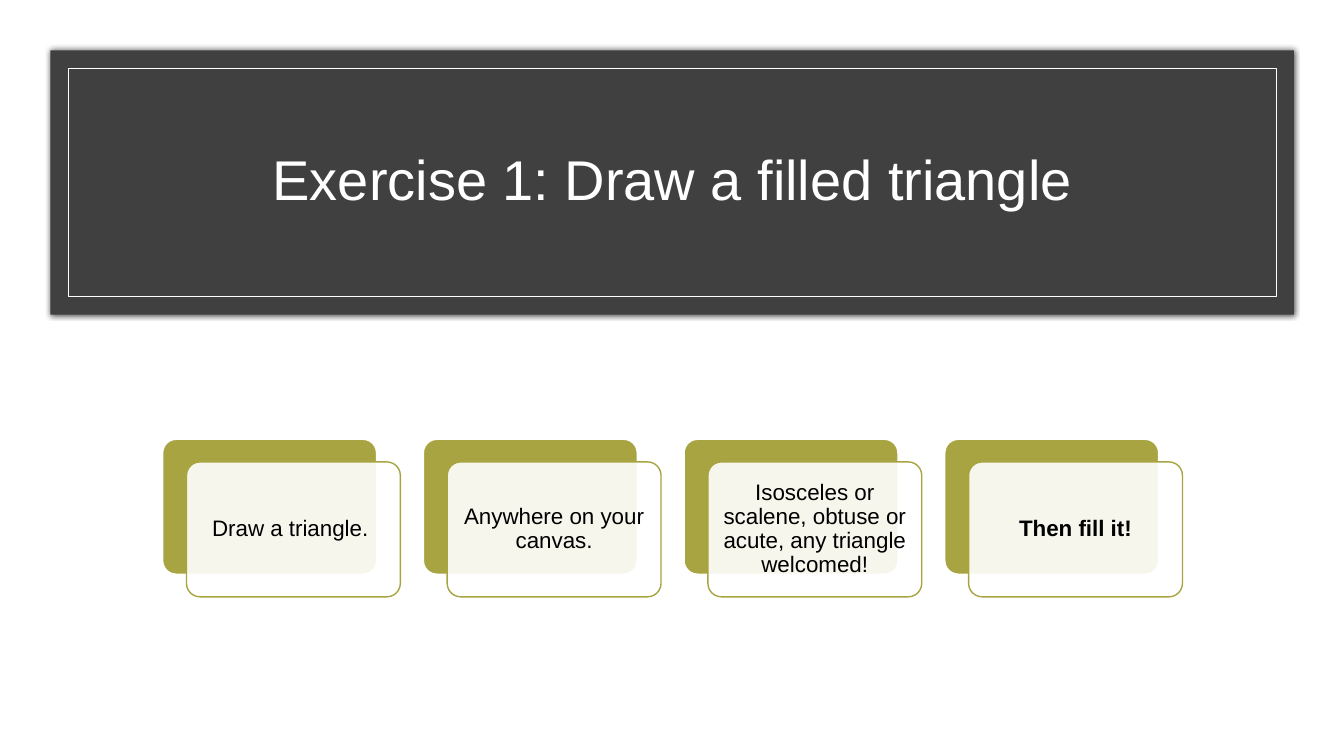
from lxml.etree import SubElement as Sub
from pptx import Presentation
from pptx.dml.color import RGBColor
from pptx.enum.shapes import MSO_SHAPE as Kind
from pptx.enum.text import MSO_ANCHOR as Anchor, MSO_AUTO_SIZE as Fit, PP_ALIGN as Align
from pptx.oxml.ns import qn
from pptx.util import Cm, Pt

DARK, OLIVE, WHITE, BLACK = "404040", "A7A441", "FFFFFF", "000000"
TITLE = "Exercise 1: Draw a filled triangle"
STEPS = [
    ("Draw a triangle. ", False),
    ("Anywhere on your canvas.", False),
    ("Isosceles or scalene, obtuse or acute, any triangle welcomed!", False),
    ("Then fill it!", True),
]


def paint(target, color):
    """Give a fill a solid colour."""
    target.solid()
    target.fore_color.rgb = RGBColor.from_string(color)


def assign(target, values):
    for name, value in values.items():
        setattr(target, name, value)


def draw(slide, kind, box, fill=None, line=None, width=1):
    shape = slide.shapes.add_shape(kind, *map(Cm, box))
    shape.shadow.inherit = False
    if fill:
        paint(shape.fill, fill)
    else:
        shape.fill.background()
    if line:
        paint(shape.line.fill, line)
        shape.line.width = Pt(width)
    else:
        shape.line.fill.background()
    return shape


def write(shape, text, color, size, inset, bold=False):
    frame = shape.text_frame
    sides = ("left", "top", "right", "bottom")
    assign(frame, {f"margin_{side}": Cm(inset) for side in sides})
    assign(frame, {"word_wrap": True, "auto_size": Fit.NONE,
                   "vertical_anchor": Anchor.MIDDLE, "text": text})
    par = frame.paragraphs[0]
    assign(par, {"alignment": Align.CENTER, "line_spacing": 0.9})
    font = par.runs[0].font
    assign(font, {"name": "Arial", "size": Pt(size), "bold": bold})
    paint(font.fill, color)


def fade(shape, percent):
    """Set the opacity of a solid fill."""
    color = shape._element.spPr.find(qn("a:solidFill"))[0]
    Sub(color, qn("a:alpha"), val=str(percent * 1000))


def glow(shape, blur, percent):
    """Add a soft black shadow on all sides."""
    effects = shape._element.spPr.find(qn("a:effectLst"))
    shade = Sub(effects, qn("a:outerShdw"), blurRad=str(Pt(blur)), dist="0",
                dir="0", algn="ctr", rotWithShape="0")
    color = Sub(shade, qn("a:srgbClr"), val=BLACK)
    Sub(color, qn("a:alpha"), val=str(percent * 1000))


def banner(slide, box):
    left, top, width, height = box
    glow(draw(slide, Kind.RECTANGLE, box, DARK), 4, 66)
    gap = 0.45
    inner = (left + gap, top + gap, width - 2 * gap, height - 2 * gap)
    draw(slide, Kind.RECTANGLE, inner, line=WHITE, width=0.5)
    title = slide.shapes.title
    slide.shapes._spTree.append(title._element)  # bring in front of the band
    area = (left + 1.7, top + 1.42, width - 3.4, 3.81)
    assign(title, dict(zip(("left", "top", "width", "height"), map(Cm, area))))
    write(title, TITLE, WHITE, 40, 0.25)


def card(slide, box, text, bold):
    """Draw a solid plate and a pale text panel shifted down and right."""
    left, top, width, height = box
    plate = draw(slide, Kind.ROUNDED_RECTANGLE, box, OLIVE, WHITE)
    front = (left + 0.6, top + 0.57, width, height)
    panel = draw(slide, Kind.ROUNDED_RECTANGLE, front, WHITE, OLIVE)
    fade(panel, 90)
    for shape in (plate, panel):
        shape.adjustments[0] = 0.1
    write(panel, text, BLACK, 16, 0.18, bold)


def cards(slide, box):
    left, top, width, height = box
    wide = 5.39
    pitch = (width - wide) / (len(STEPS) - 1)
    for index, (text, bold) in enumerate(STEPS):
        card(slide, (left + index * pitch, top, wide, height), text, bold)


def main():
    deck = Presentation()
    assign(deck, {"slide_width": Cm(33.87), "slide_height": Cm(19.05)})
    slide = deck.slides.add_slide(deck.slide_layouts[5])
    paint(slide.background.fill, WHITE)
    banner(slide, (1.27, 1.27, 31.34, 6.66))
    cards(slide, (4.1, 11.07, 25.1, 3.4))
    deck.save("out.pptx")


if __name__ == "__main__":
    main()
